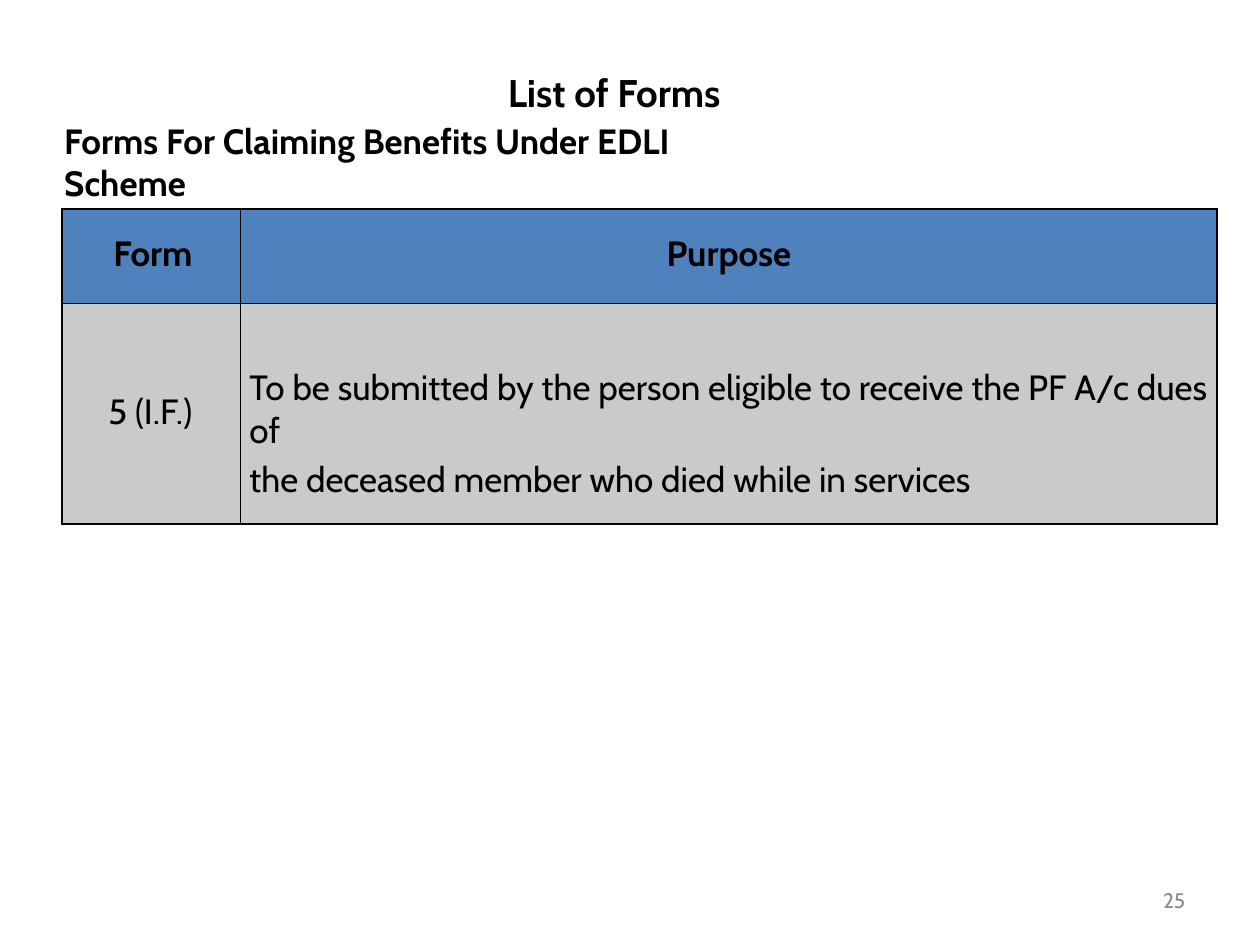
from dataclasses import dataclass
from typing import Optional

from lxml import etree
from pptx import Presentation
from pptx.dml.color import RGBColor
from pptx.enum.text import MSO_ANCHOR, PP_ALIGN
from pptx.oxml.ns import qn
from pptx.util import Inches, Pt

LEFT, CENTER = PP_ALIGN.LEFT, PP_ALIGN.CENTER
TOP = MSO_ANCHOR.TOP

FONT = "Cabin"
COLORS = {"text": "000000", "header": "4F81BC", "body": "CACACA",
          "border": "000000", "number": "888888"}
SLIDE_W, SLIDE_H = Inches(10), Inches(7.5)
BLANK_LAYOUT = 6
COLUMN_SHARES = (0.142, 0.775)
ROW_SHARES = (0.1, 0.2333)


@dataclass
class Line:
    text: str
    size: float = 20
    bold: bool = False
    indent: float = 0
    before: float = 0
    align: int = LEFT
    color: str = "text"
    spacing: Optional[float] = None


@dataclass
class Cell:
    row: int
    column: int
    fill: str
    top_inset: float
    lines: list[Line]


@dataclass
class Block:
    """A text box placed by shares of the slide's width and height."""
    x: float
    y: float
    w: float
    h: float
    top_inset: float
    lines: list[Line]


BLOCKS = [
    Block(0.05, 0.0667, 0.555, 0.1067, 0.05, [
        Line("List of Forms", size=22, bold=True, indent=3.53),
        Line("Forms For Claiming Benefits Under EDLI Scheme",
             bold=True, indent=0.01, before=2.5)]),
    Block(0.919, 0.9427, 0.025, 0.0253, 0, [
        Line("25", size=12, indent=0.04, color="number", spacing=12.4)]),
]

CELLS = [
    Cell(0, 0, "header", 0.19, [Line("Form", bold=True, indent=0.41)]),
    Cell(0, 1, "header", 0.19, [Line("Purpose", bold=True, align=CENTER)]),
    Cell(1, 0, "body", 0.69, [Line("5 (I.F.)", indent=0.37)]),
    Cell(1, 1, "body", 0.5, [
        Line("To be submitted by the person eligible to receive the PF A/c dues of",
             indent=0.07),
        Line("the deceased member who died while in services",
             indent=0.07, before=3.6)]),
]


def write_lines(frame, lines: list[Line]) -> None:
    for index, line in enumerate(lines):
        paragraph = frame.add_paragraph() if index else frame.paragraphs[0]
        paragraph.text = line.text
        paragraph.alignment = line.align
        properties = paragraph._p.get_or_add_pPr()
        properties.set("marL", str(Inches(line.indent)))
        properties.set("indent", "0")
        if line.before:
            paragraph.space_before = Pt(line.before)
        if line.spacing:
            paragraph.line_spacing = Pt(line.spacing)
        font = paragraph.font
        font.name, font.size, font.bold = FONT, Pt(line.size), line.bold
        font.color.rgb = RGBColor.from_string(COLORS[line.color])


def set_insets(holder, top: float) -> None:
    holder.margin_left = holder.margin_right = holder.margin_bottom = 0
    holder.margin_top = Inches(top)
    holder.vertical_anchor = TOP


def draw_block(slide, block: Block) -> None:
    box = slide.shapes.add_textbox(
        int(SLIDE_W * block.x), int(SLIDE_H * block.y),
        int(SLIDE_W * block.w), int(SLIDE_H * block.h))
    frame = box.text_frame
    frame.word_wrap = True
    set_insets(frame, block.top_inset)
    write_lines(frame, block.lines)


def add_borders(cell) -> None:
    properties = cell._tc.get_or_add_tcPr()
    for index, side in enumerate(("a:lnL", "a:lnR", "a:lnT", "a:lnB")):
        border = etree.Element(qn(side), w=str(Pt(1)))
        fill = etree.SubElement(border, qn("a:solidFill"))
        etree.SubElement(fill, qn("a:srgbClr"), val=COLORS["border"])
        properties.insert(index, border)


def draw_forms_table(slide) -> None:
    widths = [int(SLIDE_W * share) for share in COLUMN_SHARES]
    heights = [int(SLIDE_H * share) for share in ROW_SHARES]
    table = slide.shapes.add_table(
        len(heights), len(widths), Inches(0.49), Inches(1.66),
        sum(widths), sum(heights)).table
    for column, width in zip(table.columns, widths):
        column.width = width
    for row, height in zip(table.rows, heights):
        row.height = height
    for entry in CELLS:
        cell = table.cell(entry.row, entry.column)
        cell.fill.solid()
        cell.fill.fore_color.rgb = RGBColor.from_string(COLORS[entry.fill])
        set_insets(cell, entry.top_inset)
        add_borders(cell)
        write_lines(cell.text_frame, entry.lines)


def main() -> None:
    presentation = Presentation()
    presentation.slide_width, presentation.slide_height = SLIDE_W, SLIDE_H
    slide = presentation.slides.add_slide(presentation.slide_layouts[BLANK_LAYOUT])
    heading, page_number = BLOCKS

    # Heading, table of forms, page number
    draw_block(slide, heading)
    draw_forms_table(slide)
    draw_block(slide, page_number)

    presentation.save("out.pptx")


if __name__ == "__main__":
    main()
